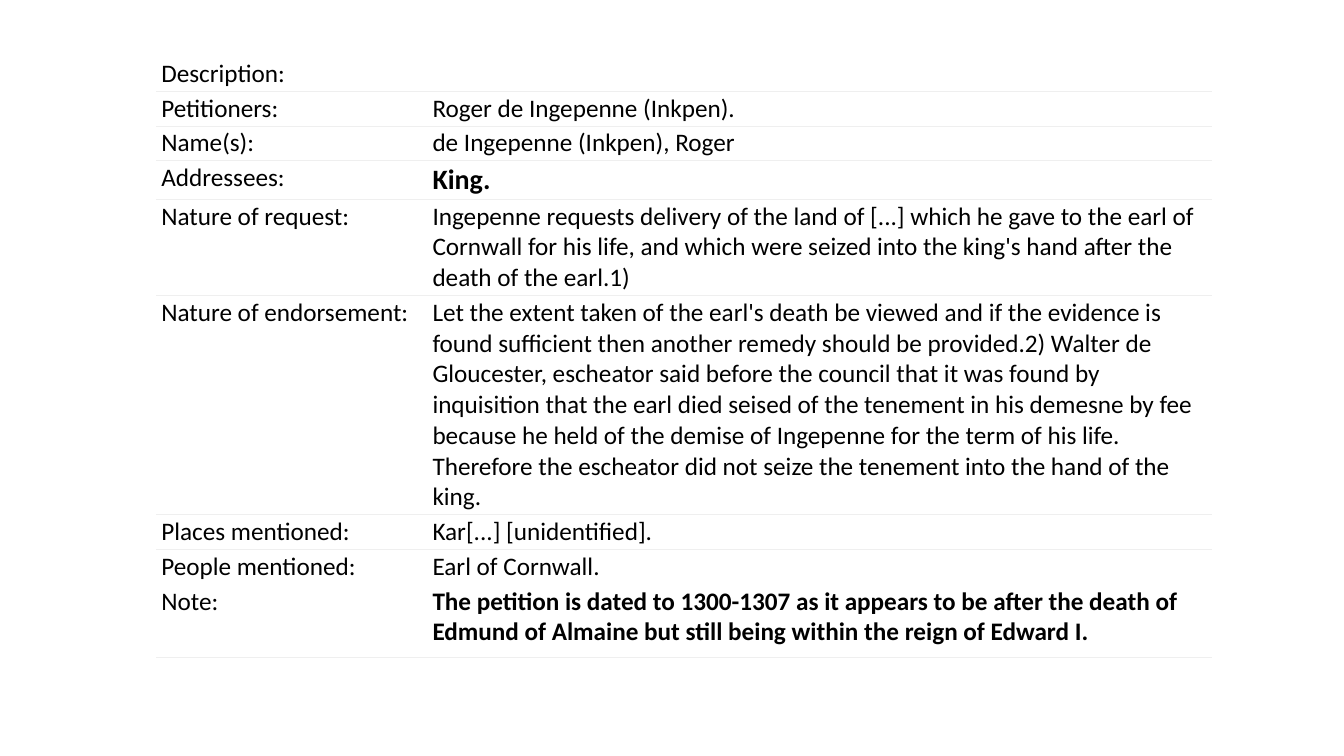
from dataclasses import dataclass

from lxml import etree
from pptx import Presentation
from pptx.dml.color import RGBColor
from pptx.enum.text import MSO_ANCHOR
from pptx.oxml.ns import qn
from pptx.util import Inches, Pt

TOP = MSO_ANCHOR.TOP
BLACK = RGBColor(0x00, 0x00, 0x00)
WHITE = RGBColor(0xFF, 0xFF, 0xFF)
RULE_GREY = RGBColor(0xEF, 0xEF, 0xEF)
RULE_WIDTH = Pt(0.75)
FONT_NAME = "Calibri"
COLUMN_WIDTHS = (2.69, 7.78)
LINE_HEIGHT = 0.18
BLANK_LAYOUT = 6


@dataclass(frozen=True)
class Entry:
    label: str
    detail: str
    height: float = LINE_HEIGHT
    size: int = 18
    bold: bool = False
    rule_above: bool = True
    rule_below: bool = True


ENTRIES = (
    Entry("Description:", "", rule_above=False),
    Entry("Petitioners:", "Roger de Ingepenne (Inkpen)."),
    Entry("Name(s):", "de Ingepenne (Inkpen), Roger"),
    Entry("Addressees:", "King.", size=20, bold=True),
    Entry(
        "Nature of request:",
        "Ingepenne requests delivery of the land of [...] which he gave to the "
        "earl of Cornwall for his life, and which were seized into the king's "
        "hand after the death of the earl.1)",
        height=0.86,
    ),
    Entry(
        "Nature of endorsement:",
        "Let the extent taken of the earl's death be viewed and if the evidence "
        "is found sufficient then another remedy should be provided.2) Walter de "
        "Gloucester, escheator said before the council that it was found by "
        "inquisition that the earl died seised of the tenement in his demesne by "
        "fee because he held of the demise of Ingepenne for the term of his life. "
        "Therefore the escheator did not seize the tenement into the hand of the "
        "king.",
        height=1.39,
    ),
    Entry("Places mentioned:", "Kar[...] [unidentified]."),
    Entry("People mentioned:", "Earl of Cornwall.", rule_below=False),
    Entry(
        "Note:",
        "The petition is dated to 1300-1307 as it appears to be after the death "
        "of Edmund of Almaine but still being within the reign of Edward I.",
        height=0.73,
        bold=True,
        rule_above=False,
    ),
)


def write_text(cell, text: str, *, size: int = 18, bold: bool = False) -> None:
    cell.margin_left = cell.margin_right = Inches(0.05)
    cell.margin_top = cell.margin_bottom = Inches(0.02)
    cell.vertical_anchor = TOP
    if not text:
        return
    span = cell.text_frame.paragraphs[0].add_run()
    span.text = text
    span.font.name = FONT_NAME
    span.font.size = Pt(size)
    span.font.bold = bold
    span.font.color.rgb = BLACK


def draw_rules(cell, *, above: bool, below: bool) -> None:
    """Set all four cell borders, hiding those without a rule."""
    properties = cell._tc.get_or_add_tcPr()
    sides = {"a:lnL": False, "a:lnR": False, "a:lnT": above, "a:lnB": below}
    for tag, visible in sides.items():
        line = etree.SubElement(properties, qn(tag), w=str(RULE_WIDTH))
        if visible:
            fill = etree.SubElement(line, qn("a:solidFill"))
            etree.SubElement(fill, qn("a:srgbClr"), val=str(RULE_GREY))
        else:
            etree.SubElement(line, qn("a:noFill"))


def add_petition_table(page) -> None:
    frame = page.shapes.add_table(
        len(ENTRIES), len(COLUMN_WIDTHS),
        Inches(1.55), Inches(0.56), Inches(sum(COLUMN_WIDTHS)), Inches(5.92),
    )
    table = frame.table
    table.first_row = False
    table.horz_banding = False
    for column, width in zip(table.columns, COLUMN_WIDTHS):
        column.width = Inches(width)
    for row, entry in zip(table.rows, ENTRIES):
        row.height = Inches(entry.height)
        label_cell, detail_cell = row.cells
        write_text(label_cell, entry.label)
        write_text(detail_cell, entry.detail, size=entry.size, bold=entry.bold)
        for cell in (label_cell, detail_cell):
            draw_rules(cell, above=entry.rule_above, below=entry.rule_below)
            cell.fill.solid()
            cell.fill.fore_color.rgb = WHITE
    # Row heights are minimums; the frame also covers the wrapped text.
    frame.height = Inches(5.92)


def main() -> None:
    deck = Presentation()
    deck.slide_width = Inches(13.33)
    deck.slide_height = Inches(7.5)
    page = deck.slides.add_slide(deck.slide_layouts[BLANK_LAYOUT])
    add_petition_table(page)
    deck.save("out.pptx")


if __name__ == "__main__":
    main()
